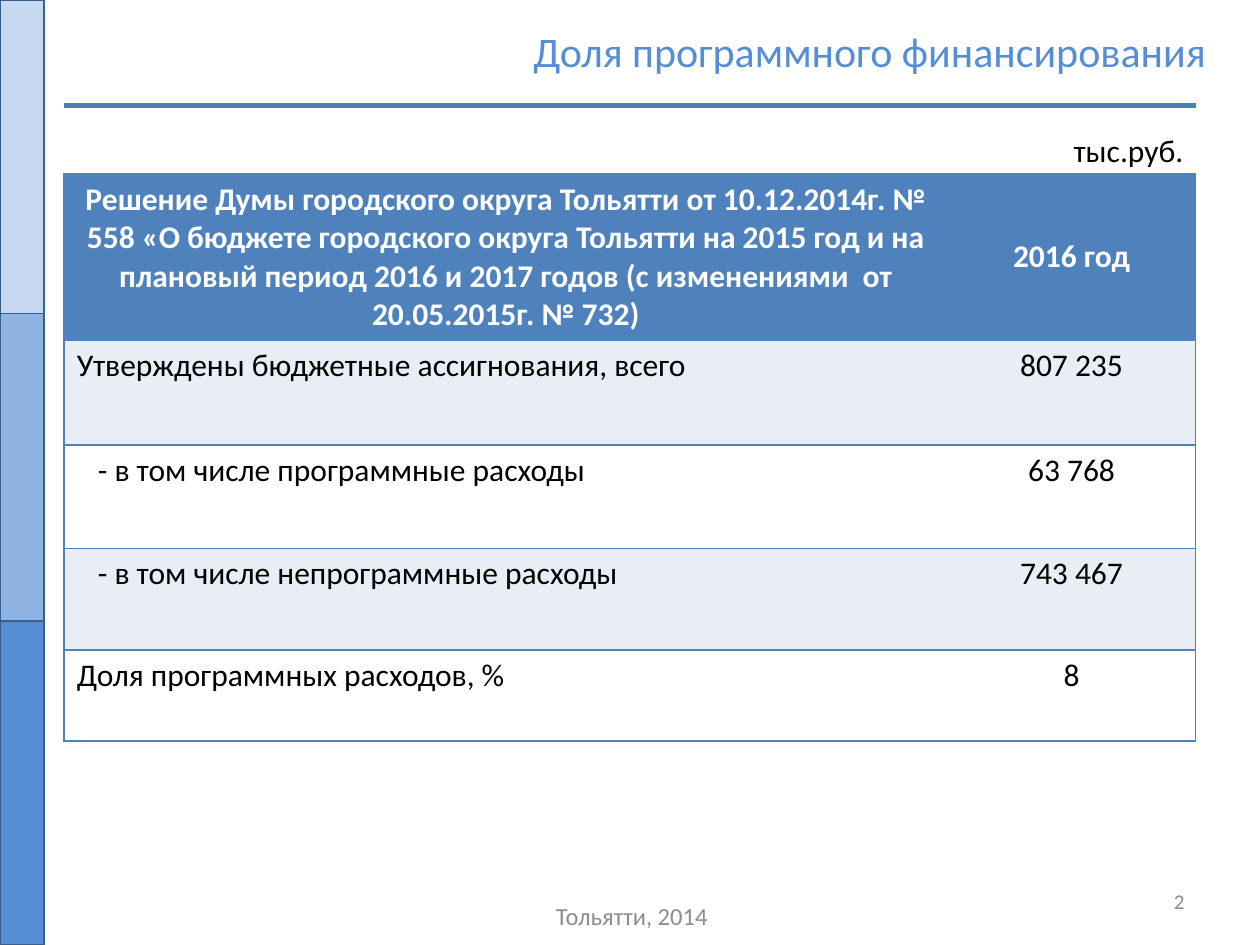
import pptx
import pptx.dml.color
import pptx.enum.shapes
import pptx.enum.text
import pptx.oxml
import pptx.oxml.ns
import pptx.util
from lxml import etree

Pt = pptx.util.Pt
RGBColor = pptx.dml.color.RGBColor
ALIGN = pptx.enum.text.PP_ALIGN
ANCHOR = pptx.enum.text.MSO_ANCHOR
qn = pptx.oxml.ns.qn

FONT = "Calibri"
BLACK = RGBColor(0x00, 0x00, 0x00)
WHITE = RGBColor(0xFF, 0xFF, 0xFF)
GRAY = RGBColor(0x8C, 0x8C, 0x8C)
TITLE_BLUE = RGBColor(0x55, 0x8E, 0xD5)
RULE_BLUE = RGBColor(0x4B, 0x7E, 0xBC)
TABLE_BLUE = RGBColor(0x4F, 0x81, 0xBD)
BAND = RGBColor(0xE9, 0xED, 0xF4)
STRIPE_EDGE = RGBColor(0x3A, 0x5F, 0x8C)
LIGHT_BLUE = RGBColor(0xC6, 0xD9, 0xF1)
MID_BLUE = RGBColor(0x8E, 0xB4, 0xE3)

NO_STYLE = "{2D5ABB26-0587-4C30-8999-92F81FD0307C}"
LEFT, WIDTH = 36.72, 646.56
INDENT = 12

# Each row: label, value, height, label indent
ROWS = [
    ("Решение Думы городского округа Тольятти от 10.12.2014г. № 558 "
     "«О бюджете городского округа Тольятти на 2015 год и на плановый период "
     "2016 и 2017 годов (с изменениями  от 20.05.2015г. № 732)", "2016 год", 95, 0),
    ("Утверждены бюджетные ассигнования, всего", "807 235", 60, 0),
    ("- в том числе программные расходы", "63 768", 59, INDENT),
    ("- в том числе непрограммные расходы", "743 467", 58, INDENT),
    ("Доля программных расходов, %", "8", 52, 0),
]


def write_text(tf, text, size=18, color=BLACK, bold=False, align=ALIGN.LEFT):
    tf.word_wrap = True
    p = tf.paragraphs[0]
    p.alignment = align
    r = p.add_run()
    r.text = text
    r.font.name = FONT
    r.font.size = Pt(size)
    r.font.bold = bold
    r.font.color.rgb = color


def add_label(s, x, y, w, h, text, anchor=ANCHOR.MIDDLE, **fmt):
    tf = s.shapes.add_textbox(Pt(x), Pt(y), Pt(w), Pt(h)).text_frame
    tf.vertical_anchor = anchor
    write_text(tf, text, **fmt)


def add_stripe(s, y, h, color):
    sp = s.shapes.add_shape(pptx.enum.shapes.MSO_SHAPE.RECTANGLE,
                            Pt(0), Pt(y), Pt(25.2), Pt(h))
    sp.shadow.inherit = False
    sp.fill.solid()
    sp.fill.fore_color.rgb = color
    sp.line.color.rgb = STRIPE_EDGE
    sp.line.width = Pt(0)


def add_rule(s, y):
    line = s.shapes.add_connector(pptx.enum.shapes.MSO_CONNECTOR.STRAIGHT,
                                  Pt(LEFT), Pt(y), Pt(LEFT + WIDTH), Pt(y))
    line.line.color.rgb = RULE_BLUE
    line.line.width = Pt(3)
    etree.SubElement(line._element.spPr, qn("a:effectLst"))


def set_borders(cell, sides):
    # Borders come before the fill in the cell properties
    tc_pr = cell._tc.get_or_add_tcPr()
    for i, side in enumerate(sides):
        ln = etree.Element(qn(f"a:ln{side}"), w=str(Pt(1)))
        fill = etree.SubElement(ln, qn("a:solidFill"))
        etree.SubElement(fill, qn("a:srgbClr"), val=str(TABLE_BLUE))
        tc_pr.insert(i, ln)


def add_budget_table(s):
    height = sum(row[2] for row in ROWS)
    table = s.shapes.add_table(len(ROWS), 2, Pt(LEFT), Pt(99.36),
                               Pt(WIDTH), Pt(height)).table
    table._tbl.tblPr.find(qn("a:tableStyleId")).text = NO_STYLE
    table.first_row = table.horz_banding = False
    table.columns[0].width = Pt(504.72)
    table.columns[1].width = Pt(WIDTH - 504.72)

    for i, (label, value, h, indent) in enumerate(ROWS):
        table.rows[i].height = Pt(h)
        header = i == 0
        fill = TABLE_BLUE if header else BAND if i % 2 else WHITE
        for j, text in enumerate((label, value)):
            cell = table.cell(i, j)
            cell.fill.solid()
            cell.fill.fore_color.rgb = fill
            cell.vertical_anchor = ANCHOR.MIDDLE if header else ANCHOR.TOP
            if j == 0:
                cell.margin_left = Pt(7.2 + indent)
            write_text(cell.text_frame, text, bold=header,
                       color=WHITE if header else BLACK,
                       align=ALIGN.CENTER if header or j else ALIGN.LEFT)
            set_borders(cell, "RTB" if j else "LTB")


def main():
    prs = pptx.Presentation()
    prs.slide_width, prs.slide_height = Pt(720), Pt(540)
    s = prs.slides.add_slide(prs.slide_layouts[6])

    # Side stripes and title rule
    for y, h, color in ((0, 179.28, LIGHT_BLUE), (179.28, 179.28, MID_BLUE),
                        (354.96, 185.04, TITLE_BLUE)):
        add_stripe(s, y, h, color)
    add_rule(s, 60.48)

    # Footer and slide number
    add_label(s, 246.96, 509.04, 228.24, 28.8, "Тольятти, 2014",
              size=14, color=GRAY, align=ALIGN.CENTER)
    add_label(s, 516.24, 500.4, 167.76, 28.8, "2",
              size=12, color=GRAY, align=ALIGN.RIGHT)

    # Table, title and unit
    add_budget_table(s)
    add_label(s, 48.24, 9.36, 648, 39.6, "Доля программного финансирования",
              size=24, color=TITLE_BLUE, align=ALIGN.RIGHT)
    add_label(s, 575.28, 71.28, 108, 28.8, "тыс.руб.",
              anchor=ANCHOR.TOP, align=ALIGN.RIGHT)

    prs.save("out.pptx")


if __name__ == "__main__":
    main()
